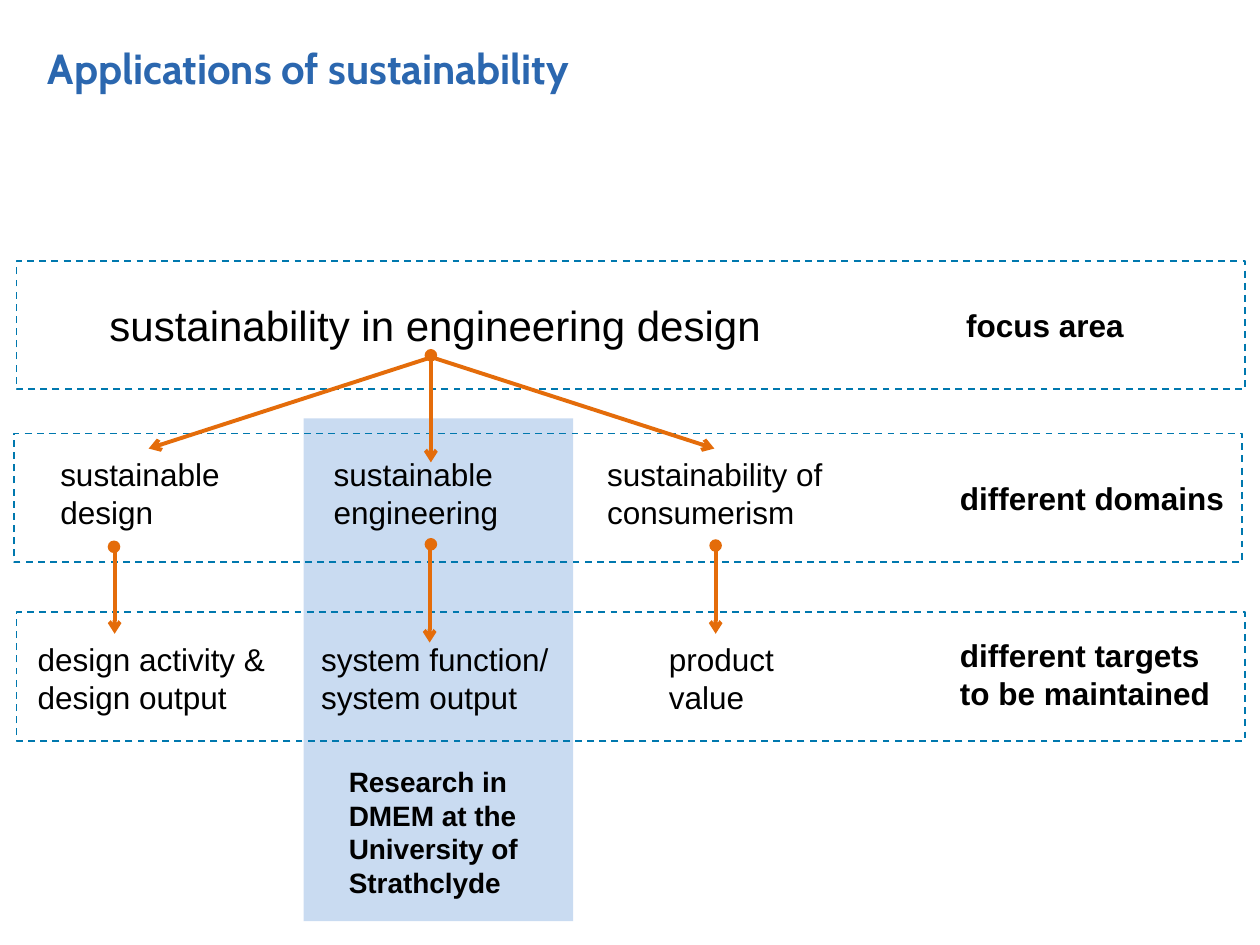
from lxml import etree
from pptx import Presentation
from pptx.dml.color import RGBColor
from pptx.enum.dml import MSO_LINE
from pptx.enum.shapes import MSO_CONNECTOR, MSO_SHAPE
from pptx.enum.text import MSO_ANCHOR, MSO_AUTO_SIZE, PP_ALIGN
from pptx.oxml.ns import qn
from pptx.util import Inches, Pt

DASH = MSO_LINE.DASH
RECTANGLE, OVAL = MSO_SHAPE.RECTANGLE, MSO_SHAPE.OVAL
STRAIGHT = MSO_CONNECTOR.STRAIGHT
TOP, LEFT, NO_FIT = MSO_ANCHOR.TOP, PP_ALIGN.LEFT, MSO_AUTO_SIZE.NONE

# The slide is a grid of 100 columns by 75 rows.
WIDTH, HEIGHT = Inches(10), Inches(7.5)
COLUMN, ROW = WIDTH / 100, HEIGHT / 75

COLORS = {
    "title": "2B67AF",
    "text": "000000",
    "band": "0078AE",
    "highlight": "94B8E4",
    "arrow": "E46C0A",
}
TITLE = {"name": "Cabin", "size": Pt(24), "bold": True}
FOCUS = {"name": "Arial", "size": Pt(24), "bold": False}
LABEL = {"name": "Arial", "size": Pt(18), "bold": False}
HEADING = {"name": "Arial", "size": Pt(18), "bold": True}
NOTE = {"name": "Arial", "size": Pt(16), "bold": True}

BAND_WIDTH, BAND_HEIGHT, LABEL_HEIGHT = 97.5, 10.2, 7.1
DOMAIN_ROW, TARGET_ROW = 35.6, 50.3
DOT = 1

# left, top of each dashed band; its heading with left, top, width, height
BANDS = [
    (1.3, 20.7, "focus area", (75.7, 23.8, 15, 4)),
    (1.1, 34.4, "different domains", (75.2, 37.5, 23.5, 4)),
    (1.3, 48.6, "different targets to be maintained",
     (75.2, 50, 23.5, LABEL_HEIGHT)),
]
# domain with left, width; target with left, width;
# arrow from focus: start, end; arrow to target: column, end row; dot centre
BRANCHES = [
    ("sustainable design", 3.8, 15.9,
     "design activity & design output", 2, 23.6,
     (34.1, 28.4), (11.8, 35.6), (9.1, 50.3), (9.05, 43.4)),
    ("sustainable engineering", 25.5, 17.4,
     "system function/ system output", 24.5, 20.4,
     (34.2, 28.4), (34.2, 36.7), (34.1, 51), (34.2, 43.2)),
    ("sustainability of consumerism", 47.2, 24,
     "product value", 52.1, 11.4,
     (34.4, 28.4), (56.7, 35.6), (56.8, 50.3), (56.8, 43.3)),
]
ARROW_START_ROW = 43.4


def color(name):
    return RGBColor.from_string(COLORS[name])


def grid(column, row):
    return round(column * COLUMN), round(row * ROW)


def write(frame, text, style, color_name="text"):
    frame.text = text
    for key, value in {"word_wrap": True, "auto_size": NO_FIT,
                       "vertical_anchor": TOP}.items():
        setattr(frame, key, value)
    paragraph = frame.paragraphs[0]
    paragraph.alignment = LEFT
    font = paragraph.runs[0].font
    for key, value in style.items():
        setattr(font, key, value)
    font.color.rgb = color(color_name)


def add_label(slide, text, left, top, width, height, style=LABEL):
    box = slide.shapes.add_textbox(*grid(left, top), *grid(width, height))
    write(box.text_frame, text, style)


def add_filled(slide, preset, left, top, width, height, color_name):
    shape = slide.shapes.add_shape(
        preset, *grid(left, top), *grid(width, height))
    shape.shadow.inherit = False
    shape.fill.solid()
    shape.fill.fore_color.rgb = color(color_name)
    shape.line.fill.background()
    return shape


def add_highlight(slide):
    """Half-transparent column that marks the research area."""
    column = add_filled(slide, RECTANGLE, 24.1, 33.2, 21.4, 39.9, "highlight")
    fill_color = column.fill._xPr.find(qn("a:solidFill"))[0]
    etree.SubElement(fill_color, qn("a:alpha"), val="50000")


def add_band(slide, left, top):
    band = slide.shapes.add_shape(
        RECTANGLE, *grid(left, top), *grid(BAND_WIDTH, BAND_HEIGHT))
    band.shadow.inherit = False
    band.fill.background()
    band.line.color.rgb = color("band")
    band.line.width = Pt(1)
    band.line.dash_style = DASH


def add_arrow(slide, start, end):
    arrow = slide.shapes.add_connector(STRAIGHT, *grid(*start), *grid(*end))
    arrow.line.color.rgb = color("arrow")
    arrow.line.width = Pt(2.25)
    etree.SubElement(arrow.line._get_or_add_ln(), qn("a:tailEnd"), type="arrow")
    etree.SubElement(arrow._element.spPr, qn("a:effectLst"))


def add_dot(slide, column, row):
    add_filled(slide, OVAL, column - DOT / 2, row - DOT / 2, DOT, DOT, "arrow")


def add_title(slide, text):
    title = slide.shapes.title
    title.left, title.top = grid(2.8, 2.9)
    title.width, title.height = grid(50.9, 5)
    write(title.text_frame, text, TITLE, "title")


def main():
    deck = Presentation()
    deck.slide_width, deck.slide_height = WIDTH, HEIGHT
    slide = deck.slides.add_slide(deck.slide_layouts[5])

    add_title(slide, "Applications of sustainability")
    add_highlight(slide)
    add_label(slide, "Research in DMEM at the University of Strathclyde",
              26.7, 60.2, 15.9, 11.8, NOTE)
    add_label(slide, "sustainability in engineering design",
              7.7, 23.3, 54.3, 5, FOCUS)
    for left, top, heading, place in BANDS:
        add_label(slide, heading, *place, HEADING)
        add_band(slide, left, top)
    for (domain, domain_left, domain_width, target, target_left, target_width,
         fan_start, fan_end, target_end, dot) in BRANCHES:
        add_label(slide, domain, domain_left, DOMAIN_ROW,
                  domain_width, LABEL_HEIGHT)
        add_label(slide, target, target_left, TARGET_ROW,
                  target_width, LABEL_HEIGHT)
        add_arrow(slide, fan_start, fan_end)
        add_arrow(slide, (target_end[0], ARROW_START_ROW), target_end)
        add_dot(slide, *dot)
    add_dot(slide, 34.2, 28.2)
    deck.save("out.pptx")


if __name__ == "__main__":
    main()
